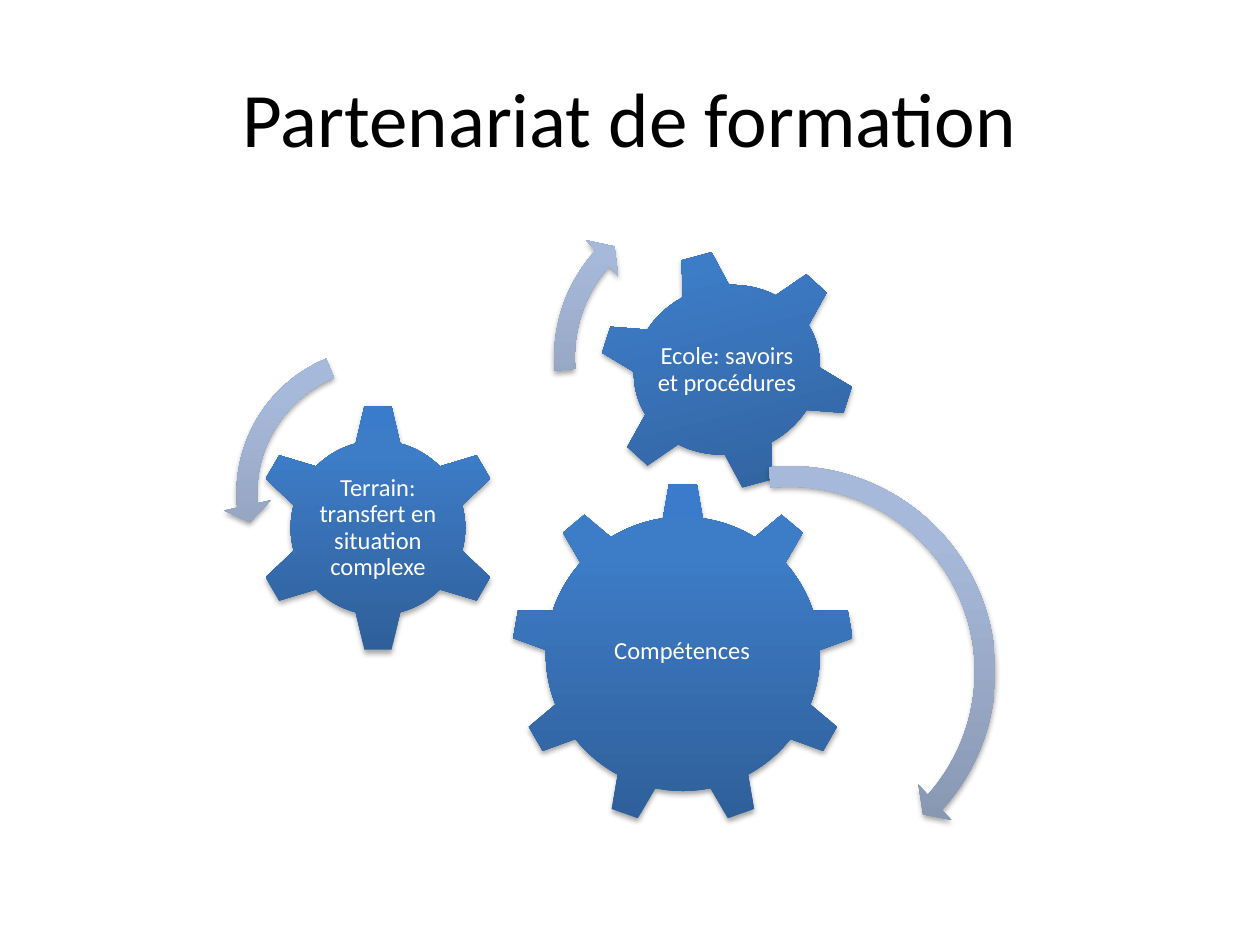
import pptx
import pptx.util
import pptx.dml.color
import pptx.enum.shapes
import pptx.enum.text
import pptx.oxml
import pptx.oxml.ns

KIND = pptx.enum.shapes.MSO_SHAPE
THEME = {
    "font": "Calibri",
    "ink": "000000",
    "light": "FFFFFF",
    "title": 44,
    "label": 14,
    "gear": ("2F5F99", "3D7CC7", "3A7CCB"),
    "arrow": ("818FA8", "A7B9DA", "A7BADC"),
    "stops": (0, 80, 100),
}
TITLE = ("Partenariat de formation", (0.5, 0.3, 9, 1.25))
GEARS = [
    (KIND.GEAR_9, (4.06, 3.83, 2.72, 2.72), 0,
     "Compétences", (4.6, 4.47, 1.63, 1.4)),
    (KIND.GEAR_6, (2.01, 3.2, 1.98, 1.98), 0,
     "Terrain: transfert en situation complexe", (2.51, 3.7, 0.98, 0.98)),
    (KIND.GEAR_6, (4.74, 1.98, 2.06, 1.91), 345,
     "Ecole: savoirs et procédures", (5.2, 2.39, 1.14, 1.09)),
]
ARROWS = [
    (KIND.CIRCULAR_ARROW, (4.53, 3.59, 3.48), 4.7, (4.98, 42.06, 264.09), 5.5),
    (KIND.LEFT_CIRCULAR_ARROW, (1.77, 2.65, 2.53), 6.5, (7.17, 174.82, 247.3), 7.5),
    (KIND.CIRCULAR_ARROW, (4.29, 1.47, 2.73), 6, (6.57, 221.9, 175.14), 7),
]


def place(box):
    return [pptx.util.Inches(n) for n in box]


def node(body):
    return pptx.oxml.parse_xml(body.replace(">", " " + pptx.oxml.ns.nsdecls("a") + ">", 1))


def draw(slide, kind, box, tones):
    shape = slide.shapes.add_shape(kind, *place(box))
    shape.line.fill.background()
    shape.shadow.inherit = False
    props = shape._element.spPr
    stops = "".join(
        f'<a:gs pos="{at * 1000}"><a:srgbClr val="{tone}"/></a:gs>'
        for at, tone in zip(THEME["stops"], tones)
    )
    fill = node(
        f'<a:gradFill rotWithShape="1"><a:gsLst>{stops}</a:gsLst>'
        '<a:lin ang="16200000" scaled="0"/></a:gradFill>'
    )
    props.find(pptx.oxml.ns.qn("a:prstGeom")).addnext(fill)
    blur, drop = pptx.util.Pt(3.1), pptx.util.Pt(1.8)
    props.find(pptx.oxml.ns.qn("a:effectLst")).append(node(
        f'<a:outerShdw blurRad="{blur}" dist="{drop}" dir="5400000" rotWithShape="0">'
        '<a:srgbClr val="000000"><a:alpha val="35000"/></a:srgbClr></a:outerShdw>'
    ))
    return shape


def write(slide, text, box, size, tone, inset=None, space=None):
    frame = slide.shapes.add_textbox(*place(box)).text_frame
    frame.text = text
    frame.word_wrap = True
    frame.vertical_anchor = pptx.enum.text.MSO_ANCHOR.MIDDLE
    if inset is not None:
        pad = pptx.util.Inches(inset)
        frame.margin_left = frame.margin_right = pad
        frame.margin_top = frame.margin_bottom = pad
    line = frame.paragraphs[0]
    line.alignment = pptx.enum.text.PP_ALIGN.CENTER
    line.line_spacing = space
    font = line.runs[0].font
    font.name = THEME["font"]
    font.size = pptx.util.Pt(size)
    font.color.rgb = pptx.dml.color.RGBColor.from_string(tone)


def main():
    deck = pptx.Presentation()
    deck.slide_width, deck.slide_height = place((10, 7.5))
    slide = deck.slides.add_slide(deck.slide_layouts[6])
    write(slide, *TITLE, THEME["title"], THEME["ink"])
    for kind, box, turn, text, area in GEARS:
        draw(slide, kind, box, THEME["gear"]).rotation = turn
        write(slide, text, area, THEME["label"], THEME["light"], 0.02, 0.9)
    for kind, (left, top, side), band, turns, head in ARROWS:
        arrow = draw(slide, kind, (left, top, side, side), THEME["arrow"])
        values = [band / 100, *(turn * 0.6 for turn in turns), head / 100]
        for i, value in enumerate(values):
            arrow.adjustments[i] = value
    deck.save("out.pptx")


if __name__ == "__main__":
    main()
